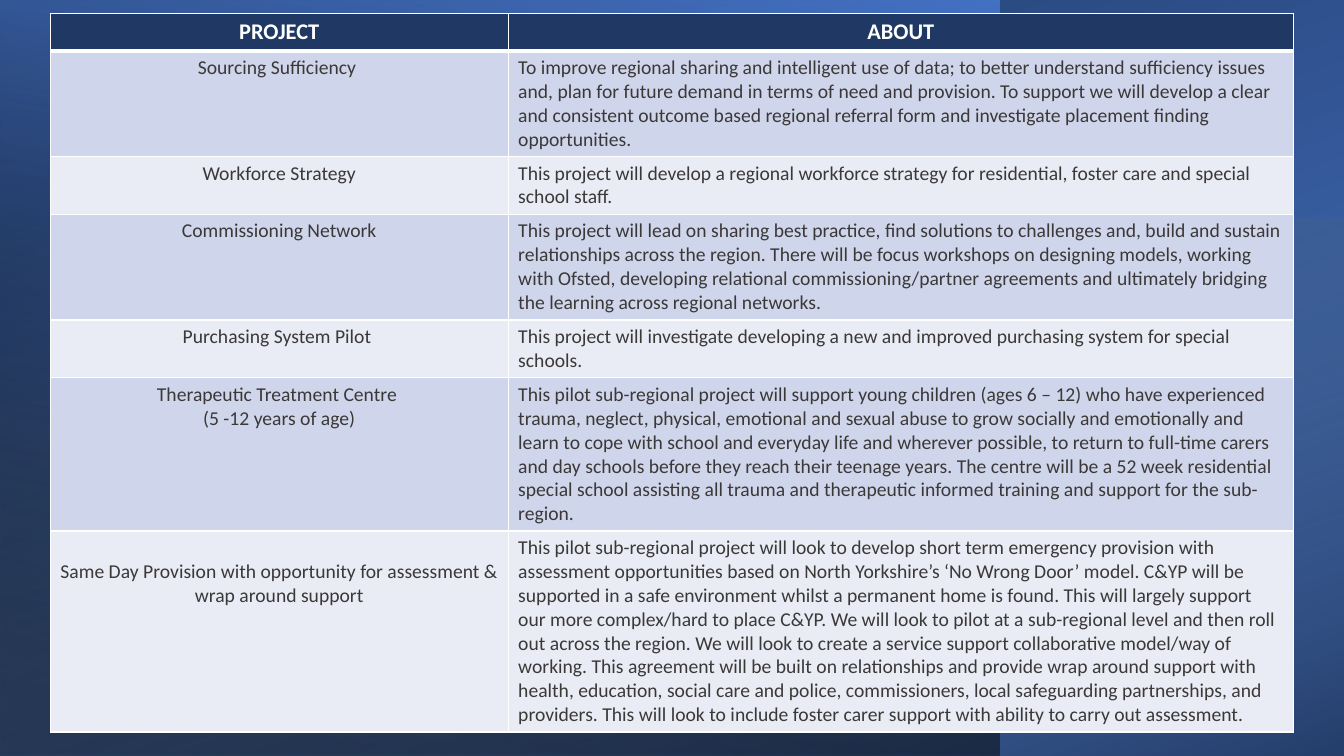
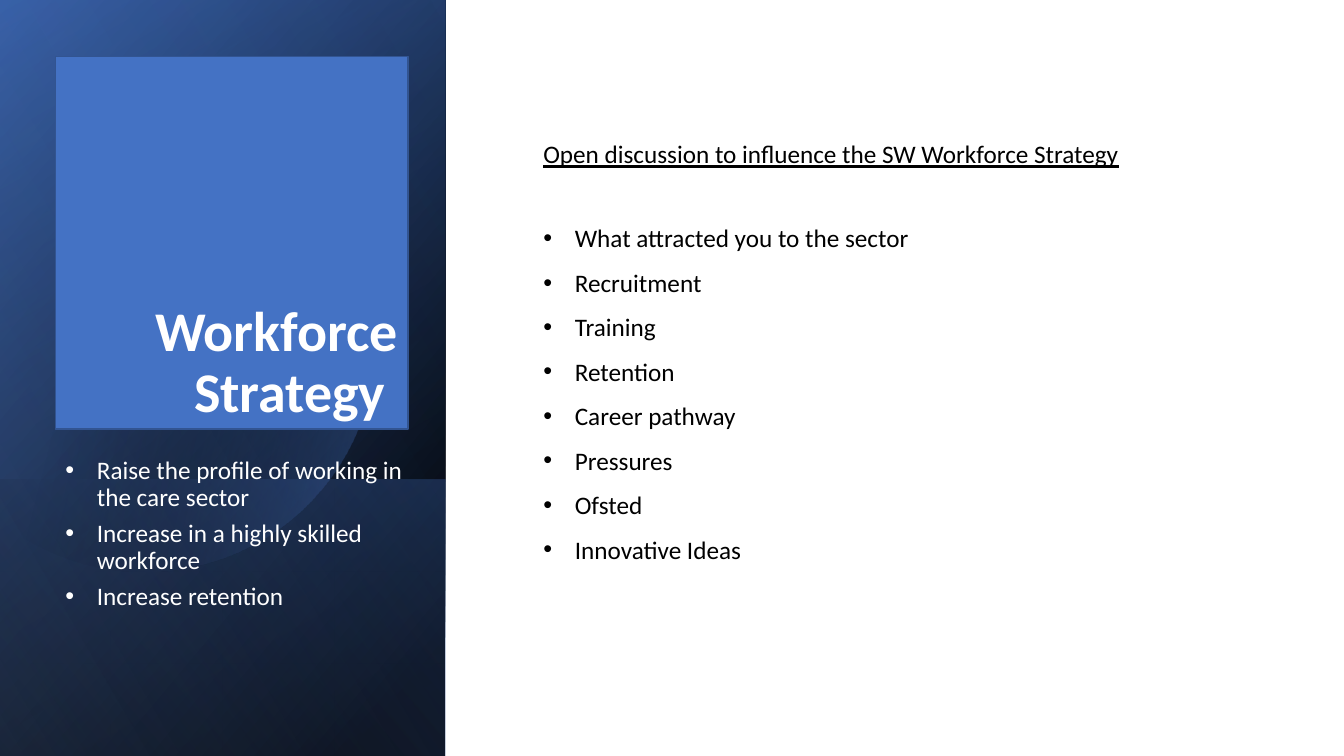
from dataclasses import dataclass

from pptx import Presentation
from pptx.dml.color import RGBColor
from pptx.enum.shapes import MSO_SHAPE
from pptx.enum.text import MSO_ANCHOR, MSO_AUTO_SIZE, PP_ALIGN
from pptx.oxml import parse_xml
from pptx.oxml.ns import nsdecls, qn
from pptx.util import Inches, Pt

RECTANGLE = MSO_SHAPE.RECTANGLE
TOP, MIDDLE, BOTTOM = MSO_ANCHOR.TOP, MSO_ANCHOR.MIDDLE, MSO_ANCHOR.BOTTOM
LEFT, CENTER, RIGHT = PP_ALIGN.LEFT, PP_ALIGN.CENTER, PP_ALIGN.RIGHT
GROW = MSO_AUTO_SIZE.SHAPE_TO_FIT_TEXT

COLUMNS, ROWS = 160, 90
FONT = "Calibri"
WHITE, BLACK, BLUE, NAVY = "FFFFFF", "000000", "4472C4", "203864"
DEEP_BLUE, PALE_BLUE, SKY, EDGE = "2F5597", "8FAADC", "9DC3E6", "325491"
BODY_INK, BANDS = "3B3838", ("CFD5EA", "E9EBF5")
SIDE_COLUMNS = 53
BULLET_INDENT = 3.75


@dataclass(frozen=True)
class Box:
    left: float
    top: float
    width: float
    height: float


@dataclass(frozen=True)
class Stop:
    position: int
    color: str
    opacity: int = 100


@dataclass(frozen=True)
class Panel:
    box: Box
    rotation: int
    angle: int
    stops: tuple[Stop, ...]


@dataclass(frozen=True)
class Project:
    name: str
    about: str
    rows: float
    lead: float = 0


FULL = Box(0, 0, COLUMNS, ROWS)
SIDE = Box(0, 0, SIDE_COLUMNS, ROWS)

TABLE_PANELS = (
    Panel(FULL, 270, 200, (Stop(8, BLUE), Stop(100, NAVY))),
    Panel(Box(0, 0, 119, ROWS), 180, 80, (Stop(8, BLACK, 52), Stop(100, BLUE))),
    Panel(Box(0, 25.9, COLUMNS, 64.1), 270, 20, (Stop(0, SKY, 0), Stop(100, BLACK, 46))),
)
SIDE_PANELS = (
    Panel(SIDE, 90, 50, (Stop(8, BLACK), Stop(100, DEEP_BLUE))),
    Panel(SIDE, 90, 30, (Stop(0, BLACK, 0), Stop(99, BLUE, 46))),
    Panel(Box(0, 57.1, SIDE_COLUMNS, 32.9), 90, 130, (Stop(2, BLUE, 29), Stop(100, BLACK, 30))),
)
SIDE_GLOW = Panel(SIDE, 90, 120, (Stop(0, BLACK, 0), Stop(99, PALE_BLUE, 11)))

DISC_STOPS = (Stop(29, BLACK, 0), Stop(100, BLUE, 43))
DISC_START = (17.9, 13.2)
DISC_RIGHT = (
    ((29.5, 13.4), (40.2, 21.2), (43.6, 33)),
    ((47.8, 47.6), (39.4, 62.8), (24.8, 67)),
    ((15.7, 69.6), (6.4, 67.3), (-0.4, 61.7)),
)
DISC_CUT = ((-1.8, 60.4), (-1.8, 21), (0, 19.3))
DISC_LEFT = (
    ((2.8, 17.2), (6, 15.5), (9.6, 14.3)),
    ((12.4, 13.6), (15.1, 13.2), DISC_START),
)

PROJECTS = (
    Project("Sourcing Sufficiency ", "To improve regional sharing and intelligent use of data; to better understand sufficiency issues and, plan for future demand in terms of need and provision. To support we will develop a clear and consistent outcome based regional referral form and investigate placement finding opportunities.", 12.4),
    Project("Workforce Strategy", "This project will develop a regional workforce strategy for residential, foster care and special school staff.", 6.7),
    Project("Commissioning Network", "This project will lead on sharing best practice, find solutions to challenges and, build and sustain relationships across the region. There will be focus workshops on designing models, working with Ofsted, developing relational commissioning/partner agreements and ultimately bridging the learning across regional networks.", 12.6),
    Project("Purchasing System Pilot ", "This project will investigate developing a new and improved purchasing system for special schools.", 6.7),
    Project("Therapeutic Treatment Centre \n(5 -12 years of age)", "This pilot sub-regional project will support young children (ages 6 – 12) who have experienced trauma, neglect, physical, emotional and sexual abuse to grow socially and emotionally and learn to cope with school and everyday life and wherever possible, to return to full-time carers and day schools before they reach their teenage years. The centre will be a 52 week residential special school assisting all trauma and therapeutic informed training and support for the sub-region.", 18.1),
    Project("Same Day Provision with opportunity for assessment & wrap around support", "This pilot sub-regional project will look to develop short term emergency provision with assessment opportunities based on North Yorkshire’s ‘No Wrong Door’ model. C&YP will be supported in a safe environment whilst a permanent home is found. This will largely support our more complex/hard to place C&YP. We will look to pilot at a sub-regional level and then roll out across the region. We will look to create a service support collaborative model/way of working. This agreement will be built on relationships and provide wrap around support with health, education, social care and police, commissioners, local safeguarding partnerships, and providers. This will look to include foster carer support with ability to carry out assessment.", 23.7, 2.85),
)
TOPICS = (
    "What attracted you to the sector", "Recruitment", "Training", "Retention",
    "Career pathway", "Pressures", "Ofsted", "Innovative Ideas",
)
GOALS = (
    "Raise the profile of working in the care sector",
    "Increase in a highly skilled workforce",
    "Increase retention",
)


def grid(units: float) -> int:
    return Inches(units / 12)


def frame(box: Box) -> tuple[int, ...]:
    return tuple(grid(units) for units in (box.left, box.top, box.width, box.height))


def rgb(color: str) -> RGBColor:
    return RGBColor.from_string(color)


def fill_gradient(shape, stops: tuple[Stop, ...], angle: int) -> None:
    shape.shadow.inherit = False
    shape.line.fill.background()
    shape.fill.solid()
    marks = "".join(
        f'<a:gs pos="{stop.position * 1000}"><a:srgbClr val="{stop.color}">'
        f'<a:alpha val="{stop.opacity * 1000}"/></a:srgbClr></a:gs>'
        for stop in stops
    )
    properties = shape._element.spPr
    properties.replace(properties.find(qn("a:solidFill")), parse_xml(
        f'<a:gradFill {nsdecls("a")} rotWithShape="1"><a:gsLst>{marks}</a:gsLst>'
        f'<a:lin ang="{angle * 60000}" scaled="0"/></a:gradFill>'
    ))


def draw_panel(page, panel: Panel) -> None:
    box = panel.box
    if panel.rotation % 180:
        shift = (box.width - box.height) / 2
        box = Box(box.left + shift, box.top - shift, box.height, box.width)
    shape = page.shapes.add_shape(RECTANGLE, *frame(box))
    shape.rotation = panel.rotation
    shape._element.spPr.xfrm.set("flipH", "1")
    fill_gradient(shape, panel.stops, panel.angle)


def trace_curves(start: tuple, curves: tuple, steps: int = 24) -> list[tuple]:
    points = []
    for first, second, end in curves:
        for step in range(1, steps + 1):
            t = step / steps
            weights = ((1 - t) ** 3, 3 * t * (1 - t) ** 2, 3 * t * t * (1 - t), t ** 3)
            corners = (start, first, second, end)
            points.append(tuple(
                sum(weight * corner[axis] for weight, corner in zip(weights, corners))
                for axis in (0, 1)
            ))
        start = end
    return points


def draw_disc(page) -> None:
    points = [*trace_curves(DISC_START, DISC_RIGHT), *DISC_CUT]
    points += trace_curves(DISC_CUT[-1], DISC_LEFT)
    builder = page.shapes.build_freeform(*(grid(units) for units in DISC_START))
    builder.add_line_segments([(grid(x), grid(y)) for x, y in points], close=True)
    fill_gradient(builder.convert_to_shape(), DISC_STOPS, 14)


def write(frame_text, text: str, *, size: float = 18, color: str = BLACK,
          bold: bool = False, underline: bool = False, align=LEFT,
          spacing: float = 1.0, after: float = 0, bullet: bool = False,
          fresh: bool = False) -> None:
    for index, line in enumerate(text.split("\n")):
        first = fresh and index == 0
        para = frame_text.paragraphs[0] if first else frame_text.add_paragraph()
        para.alignment = align
        para.line_spacing = spacing
        para.space_before, para.space_after = Pt(0), Pt(after)
        span = para.add_run()
        span.text = line
        span.font.name, span.font.size = FONT, Pt(size)
        span.font.bold, span.font.underline = bold, underline
        span.font.color.rgb = rgb(color)
        if bullet:
            properties = para._p.get_or_add_pPr()
            properties.set("marL", str(grid(BULLET_INDENT)))
            properties.set("indent", str(-grid(BULLET_INDENT)))
            properties.append(parse_xml(f'<a:buFont {nsdecls("a")} typeface="Arial"/>'))
            properties.append(parse_xml(f'<a:buChar {nsdecls("a")} char="•"/>'))


def add_text_box(page, box: Box, anchor):
    frame_text = page.shapes.add_textbox(*frame(box)).text_frame
    frame_text.word_wrap = True
    frame_text.vertical_anchor = anchor
    return frame_text


def style_cell(cell, fill: str, top: float, bottom: float) -> None:
    cell.fill.solid()
    cell.fill.fore_color.rgb = rgb(fill)
    edges = (("lnL", 1), ("lnR", 1), ("lnT", top), ("lnB", bottom))
    for index, (edge, width) in enumerate(edges):
        cell._tc.get_or_add_tcPr().insert(index, parse_xml(
            f'<a:{edge} {nsdecls("a")} w="{Pt(width)}"><a:solidFill>'
            f'<a:srgbClr val="{WHITE}"/></a:solidFill></a:{edge}>'
        ))


def draw_projects(page) -> None:
    heights = (4.3, *(project.rows for project in PROJECTS))
    box = Box(6, 1.6, 148, sum(heights))
    table = page.shapes.add_table(len(heights), 2, *frame(box)).table
    for column, width in zip(table.columns, (54.5, 93.5)):
        column.width = grid(width)
    for row, height in zip(table.rows, heights):
        row.height = grid(height)
    for column, heading in enumerate(("PROJECT", "ABOUT")):
        cell = table.cell(0, column)
        style_cell(cell, NAVY, 1, 3)
        write(cell.text_frame, heading, size=16, color=WHITE, bold=True, align=CENTER, fresh=True)
    for index, project in enumerate(PROJECTS):
        entries = ((project.name, CENTER, project.lead), (project.about, LEFT, 0))
        for column, (text, align, lead) in enumerate(entries):
            cell = table.cell(index + 1, column)
            style_cell(cell, BANDS[index % 2], 1 if index else 3, 1)
            cell.margin_top = grid(0.6 + lead)
            write(cell.text_frame, text, size=14, color=BODY_INK, align=align, fresh=True)


def draw_title(page, title: str) -> None:
    shape = page.shapes.add_shape(RECTANGLE, *frame(Box(6.6, 6.7, 42, 44.4)))
    shape.shadow.inherit = False
    shape.fill.solid()
    shape.fill.fore_color.rgb = rgb(BLUE)
    shape.line.color.rgb = rgb(EDGE)
    shape.line.width = Pt(1)
    shape.text_frame.word_wrap = True
    shape.text_frame.vertical_anchor = BOTTOM
    write(shape.text_frame, title, size=40, color=WHITE, bold=True,
          align=RIGHT, spacing=0.9, after=6, fresh=True)


def draw_workforce(page) -> None:
    draw_disc(page)
    draw_panel(page, SIDE_GLOW)
    draw_title(page, "Workforce Strategy ")
    discussion = add_text_box(page, Box(63.5, 0, 86, ROWS), MIDDLE)
    discussion.margin_bottom = grid(6.5)
    write(discussion, "Open discussion to influence the SW Workforce Strategy",
          underline=True, spacing=0.9, after=28, fresh=True)
    for topic in TOPICS:
        write(discussion, topic, spacing=1.47, bullet=True)
    goals = add_text_box(page, Box(6.6, 53.9, 44.5, 28.2), TOP)
    goals.auto_size = GROW
    for index, goal in enumerate(GOALS):
        write(goals, goal, color=WHITE, spacing=0.9, after=6, bullet=True, fresh=index == 0)


def main() -> None:
    deck = Presentation()
    deck.slide_width, deck.slide_height = grid(COLUMNS), grid(ROWS)
    for panels, draw in ((TABLE_PANELS, draw_projects), (SIDE_PANELS, draw_workforce)):
        page = deck.slides.add_slide(deck.slide_layouts[6])
        for panel in panels:
            draw_panel(page, panel)
        draw(page)
    deck.save("out.pptx")


if __name__ == "__main__":
    main()
